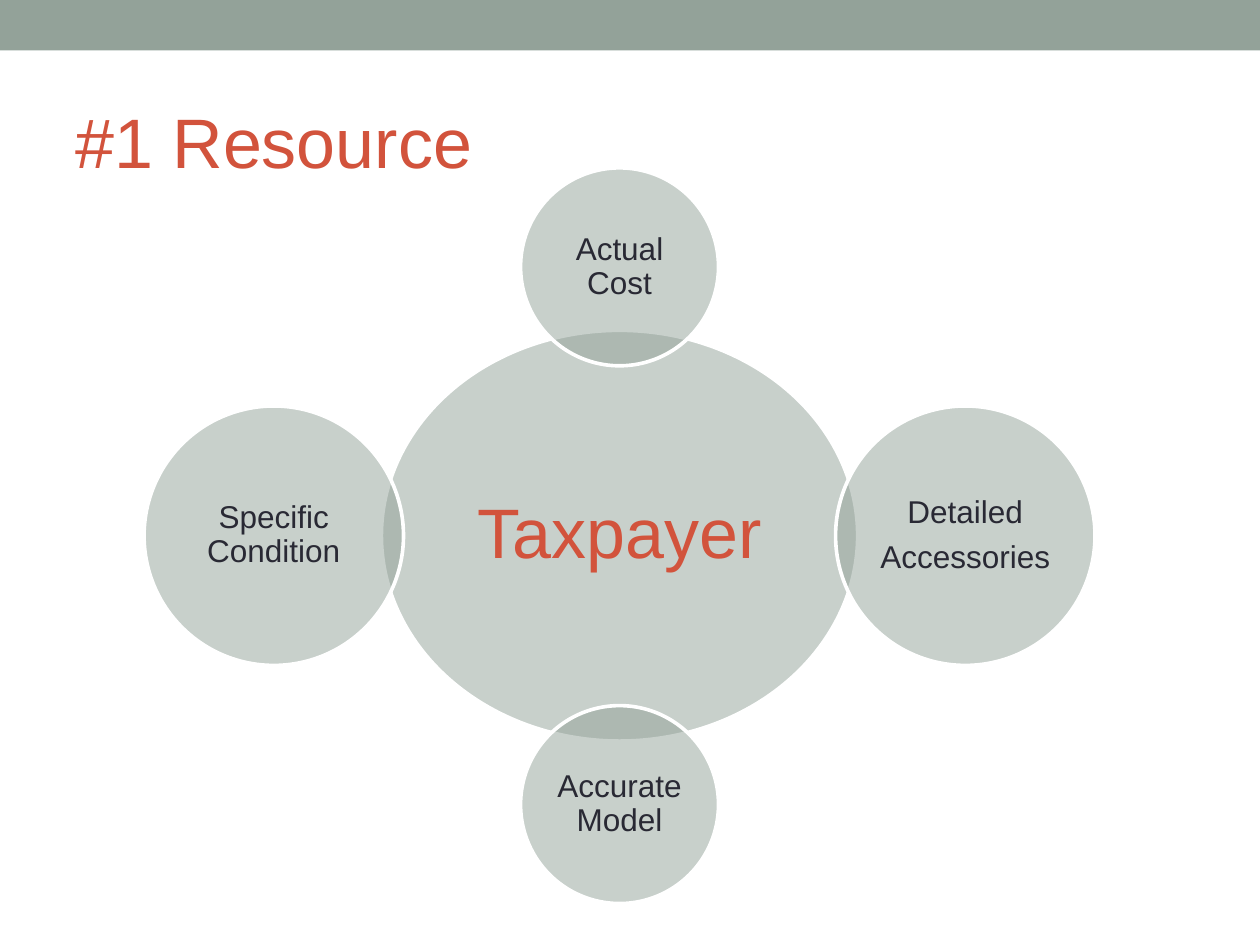
from lxml.etree import SubElement
from pptx import Presentation
from pptx.dml.color import RGBColor
from pptx.enum.shapes import MSO_SHAPE as Shape
from pptx.enum.text import MSO_ANCHOR as Anchor, PP_ALIGN as Align
from pptx.oxml.ns import qn
from pptx.util import Cm, Pt

TITLE = "#1 Resource"
HUB = {"lines": ["Taxpayer"], "size": (9.6, 8.28)}
# direction from the hub (x, y), diameter, lines of text, space between lines
SATELLITES = [
    ((0, -1), 3.99, ["Actual Cost"], 0),
    ((1, 0), 5.23, ["Detailed", "Accessories"], 6.3),
    ((0, 1), 3.99, ["Accurate Model"], 0),
    ((-1, 0), 5.23, ["Specific", "Condition"], 0),
]
SLIDE_SIZE = (25.4, 19.05)
CENTER = (12.49, 10.8)
REACH = (6.97, 5.42)
THEME = {
    "font": "Arial",
    "sage": RGBColor(0x93, 0xA2, 0x99),
    "accent": RGBColor(0xD2, 0x53, 0x3C),
    "dark": RGBColor(0x29, 0x29, 0x34),
    "white": RGBColor(0xFF, 0xFF, 0xFF),
    "large": Pt(40),
    "small": Pt(18),
    "outline": Pt(2.08),
}


def write(shape, lines, *, size, color, align=Align.CENTER, inset=(0.05, 0.05),
          line_spacing=0.9, gap=0):
    frame = shape.text_frame
    frame.word_wrap = True
    frame.vertical_anchor = Anchor.MIDDLE
    frame.margin_left = frame.margin_right = Cm(inset[0])
    frame.margin_top = frame.margin_bottom = Cm(inset[1])
    for index, line in enumerate(lines):
        paragraph = frame.add_paragraph() if index else frame.paragraphs[0]
        paragraph.alignment = align
        paragraph.line_spacing = line_spacing
        paragraph.space_before = Pt(gap if index else 0)
        run = paragraph.add_run()
        run.text = line
        run.font.name = THEME["font"]
        run.font.size = size
        run.font.color.rgb = color


def add_filled(slide, kind, left, top, width, height):
    shape = slide.shapes.add_shape(kind, Cm(left), Cm(top), Cm(width), Cm(height))
    shape.shadow.inherit = False
    shape.fill.solid()
    shape.fill.fore_color.rgb = THEME["sage"]
    shape.line.fill.background()
    return shape


def add_circle(slide, center, width, height):
    """Add a half-transparent, white-outlined ellipse around a center point."""
    circle = add_filled(slide, Shape.OVAL, center[0] - width / 2,
                        center[1] - height / 2, width, height)
    color = circle.fill._xPr.find(qn("a:solidFill"))[0]
    SubElement(color, qn("a:alpha"), val="50000")
    circle.line.color.rgb = THEME["white"]
    circle.line.width = THEME["outline"]
    return circle


def main():
    presentation = Presentation()
    presentation.slide_width, presentation.slide_height = map(Cm, SLIDE_SIZE)
    slide = presentation.slides.add_slide(presentation.slide_layouts[6])

    add_filled(slide, Shape.RECTANGLE, 0, 0, SLIDE_SIZE[0], 1.02)
    title = slide.shapes.add_textbox(Cm(1.27), Cm(1.47), Cm(22.86), Cm(2.74))
    write(title, [TITLE], size=THEME["large"], color=THEME["accent"],
          align=Align.LEFT, inset=(0.25, 0.13), line_spacing=1.0)

    hub = add_circle(slide, CENTER, *HUB["size"])
    write(hub, HUB["lines"], size=THEME["large"], color=THEME["accent"],
          inset=(0.15, 0.15))
    for direction, diameter, lines, gap in SATELLITES:
        center = [c + d * r for c, d, r in zip(CENTER, direction, REACH)]
        circle = add_circle(slide, center, diameter, diameter)
        write(circle, lines, size=THEME["small"], color=THEME["dark"], gap=gap)

    presentation.save("out.pptx")


if __name__ == "__main__":
    main()
